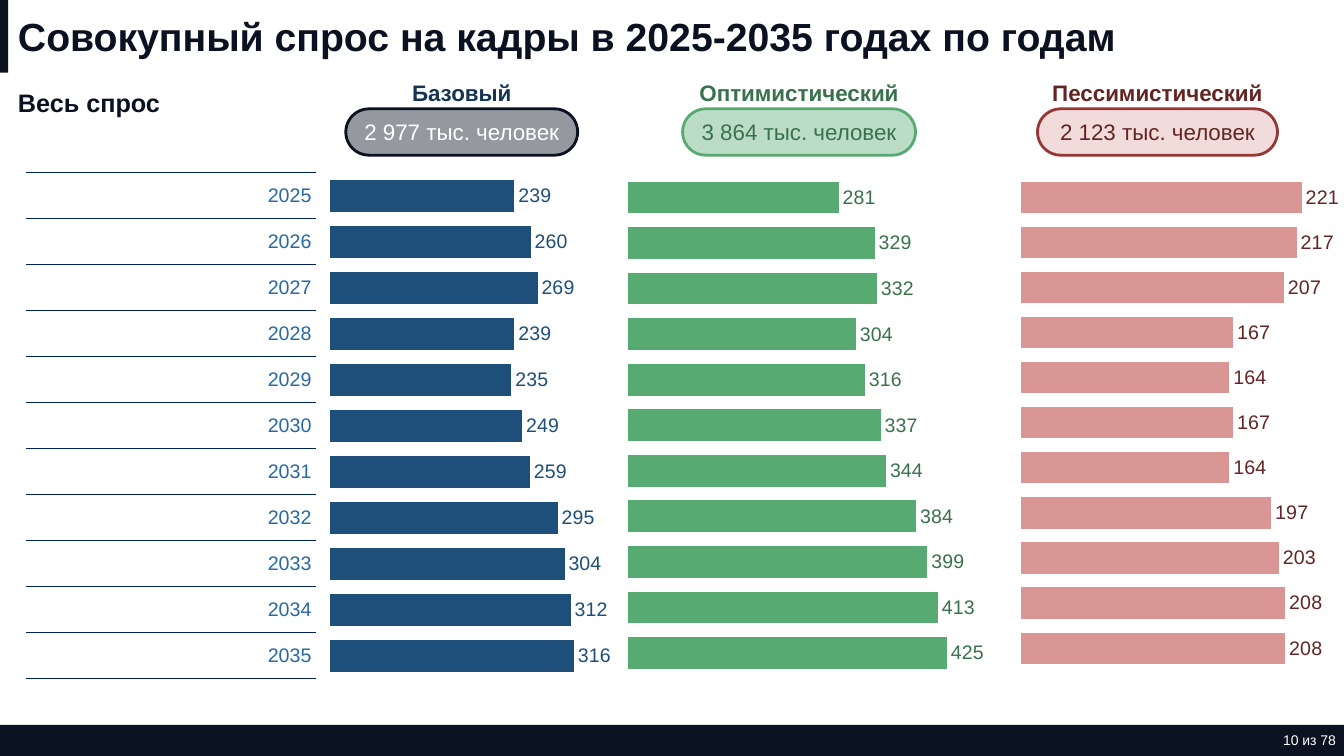
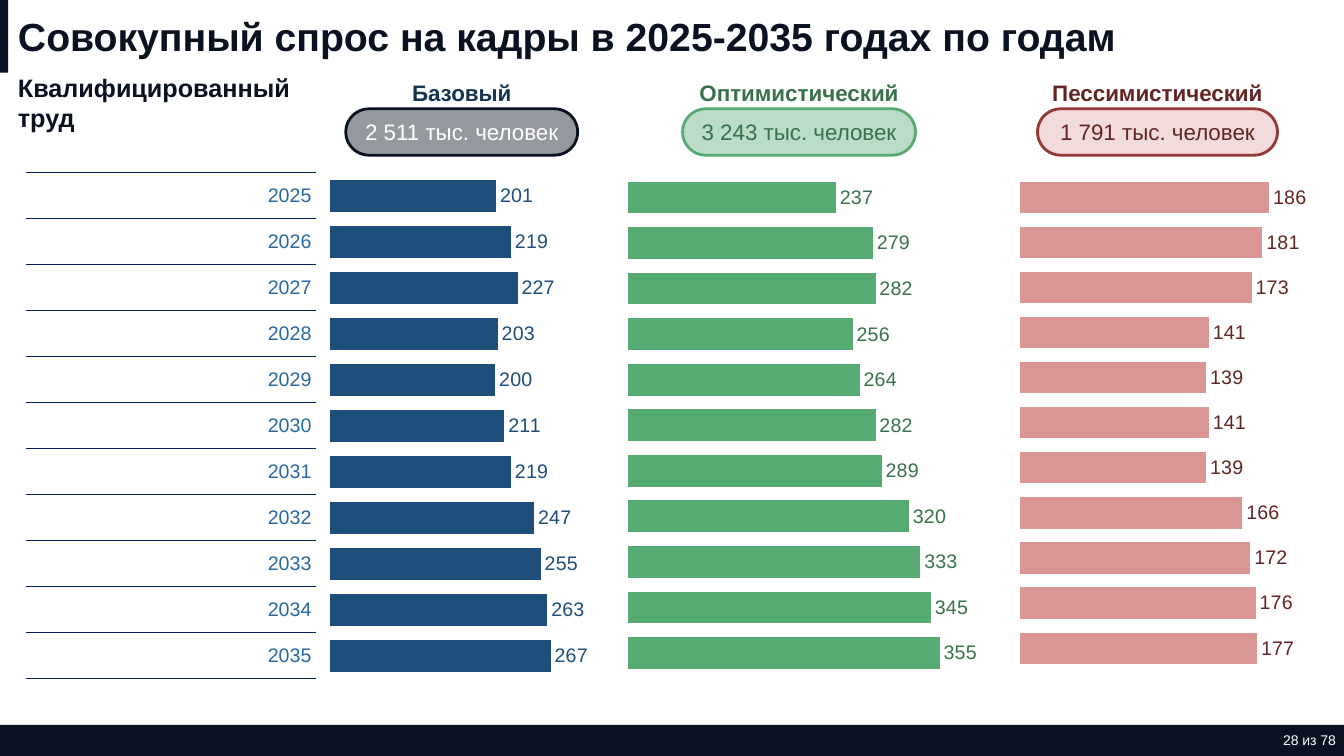
from dataclasses import dataclass

from lxml import etree
from pptx import Presentation
from pptx.chart.data import CategoryChartData
from pptx.dml.color import RGBColor
from pptx.enum.chart import XL_CHART_TYPE, XL_LABEL_POSITION
from pptx.enum.shapes import MSO_SHAPE
from pptx.enum.text import MSO_ANCHOR, PP_ALIGN
from pptx.oxml.ns import qn
from pptx.util import Inches, Pt

BAR = XL_CHART_TYPE.BAR_CLUSTERED
OUTER = XL_LABEL_POSITION.OUTSIDE_END
RECT, PILL = MSO_SHAPE.RECTANGLE, MSO_SHAPE.ROUNDED_RECTANGLE
MIDDLE = MSO_ANCHOR.MIDDLE
LEFT, CENTER, RIGHT = PP_ALIGN.LEFT, PP_ALIGN.CENTER, PP_ALIGN.RIGHT

FONT = "Arial"
WIDE, HIGH = 13.33, 7.5
TITLE = "Совокупный спрос на кадры в 2025-2035 годах по годам"
YEARS = range(2025, 2036)
COLORS = {
    "ink": "0A1121", "white": "FFFFFF", "black": "000000",
    "year": "2868A3", "rule": "002060",
    "navy": "143452", "blue": "1E4E7A",
    "forest": "39714C", "green": "56AA72", "mint": "BBDDC7",
    "wine": "632523", "red": "953735", "rose": "D99694", "blush": "F2DCDB",
}


@dataclass
class Scene:
    """Look and place of one scenario column."""
    name: str
    pill: tuple
    label: float
    chart: tuple
    top: float
    head: str
    text: str
    fill: str
    line: str
    bar: str
    value: str
    alpha: int = 100


SCENES = [
    Scene("Базовый", (3.43, 1.08, 2.3, 0.46), 2.25, (3.19, 1.54, 5.3), 0.033,
          "navy", "white", "ink", "ink", "blue", "blue", 43),
    Scene("Оптимистический", (6.77, 1.08, 2.31, 0.46), 2.25, (6.12, 1.54, 5.27), 0.037,
          "forest", "forest", "mint", "green", "green", "forest"),
    Scene("Пессимистический", (10.29, 1.08, 2.38, 0.46), 2.5, (10.03, 1.54, 5.22), 0.037,
          "wine", "wine", "blush", "red", "rose", "wine"),
]


@dataclass
class Data:
    """Total, chart width, plot share, axis end and yearly values."""
    total: str
    width: float
    share: float
    end: int
    values: list


PAGES = [
    ("Весь спрос", "10 из 78", [
        Data("2 977 тыс. человек", 2.87, 0.958, 357,
             [239, 260, 269, 239, 235, 249, 259, 295, 304, 312, 316]),
        Data("3 864 тыс. человек", 3.64, 0.958, 465,
             [281, 329, 332, 304, 316, 337, 344, 384, 399, 413, 425]),
        Data("2 123 тыс. человек", 3.29, 0.958, 250,
             [221, 217, 207, 167, 164, 167, 164, 197, 203, 208, 208]),
    ]),
    ("Квалифицированный труд", "28 из 78", [
        Data("2 511 тыс. человек", 2.87, 0.857, 300,
             [201, 219, 227, 203, 200, 211, 219, 247, 255, 263, 267]),
        Data("3 243 тыс. человек", 3.64, 0.958, 400,
             [237, 279, 282, 256, 264, 282, 289, 320, 333, 345, 355]),
        Data("1 791 тыс. человек", 2.97, 0.895, 200,
             [186, 181, 173, 141, 139, 141, 139, 166, 172, 176, 177]),
    ]),
]


def paint(name):
    """Return the named colour."""
    return RGBColor.from_string(COLORS[name])


def place(box):
    """Turn a box in inches into lengths."""
    return [Inches(side) for side in box]


def style(font, size, color, bold=False):
    """Set the face, size, colour and weight of a font."""
    font.name, font.size, font.bold = FONT, Pt(size), bold
    font.color.rgb = paint(color)


def write(frame, text, size=14, color="ink", bold=False, align=LEFT):
    """Put one formatted paragraph into a text frame."""
    frame.word_wrap = True
    para = frame.paragraphs[0]
    para.alignment = align
    run = para.add_run()
    run.text = text
    style(run.font, size, color, bold)


def label(slide, box, text, inset=0.1, **look):
    """Add a text box centred on its height."""
    frame = slide.shapes.add_textbox(*place(box)).text_frame
    frame.vertical_anchor = MIDDLE
    frame.margin_right = Inches(inset)
    write(frame, text, **look)


def block(slide, box, kind, fill, line=None, alpha=100):
    """Add a filled shape with an optional outline."""
    shape = slide.shapes.add_shape(kind, *place(box))
    shape.shadow.inherit = False
    shape.fill.solid()
    shape.fill.fore_color.rgb = paint(fill)
    if alpha < 100:
        tone = shape.element.spPr.find(qn("a:solidFill") + "/" + qn("a:srgbClr"))
        etree.SubElement(tone, qn("a:alpha"), val=str(alpha * 1000))
    if line:
        shape.line.color.rgb = paint(line)
        shape.line.width = Pt(2)
    else:
        shape.line.fill.background()
    return shape


def border(cell):
    """Rule the top and bottom of a table cell."""
    props = cell._tc.get_or_add_tcPr()
    for spot, side in enumerate(("a:lnL", "a:lnR", "a:lnT", "a:lnB")):
        line = etree.Element(qn(side), w=str(Pt(0.25)))
        if side in ("a:lnT", "a:lnB"):
            solid = etree.SubElement(line, qn("a:solidFill"))
            etree.SubElement(solid, qn("a:srgbClr"), val=COLORS["rule"])
        else:
            etree.SubElement(line, qn("a:noFill"))
        props.insert(spot, line)


def years(slide, box):
    """Add the ruled column of years."""
    table = slide.shapes.add_table(len(YEARS), 1, *place(box)).table
    table.first_row = table.horz_banding = False
    for row, year in zip(table.rows, YEARS):
        row.height = Inches(box[3] / len(YEARS))
        cell = row.cells[0]
        cell.fill.background()
        border(cell)
        cell.vertical_anchor = MIDDLE
        cell.margin_left, cell.margin_right = Inches(0.01), Inches(0.04)
        cell.margin_top = cell.margin_bottom = 0
        write(cell.text_frame, str(year), color="year", align=RIGHT)


def head(slide, box, scene, total):
    """Add a scenario name above its pill with the total."""
    left, top, width, height = box
    pill = block(slide, box, PILL, scene.fill, scene.line, scene.alpha)
    pill.adjustments[0] = 0.5
    pill.text_frame.vertical_anchor = MIDDLE
    write(pill.text_frame, total, size=16, color=scene.text, align=CENTER)
    start = left + (width - scene.label) / 2
    label(slide, (start, top - 0.39, scene.label, height), scene.name,
          size=16, color=scene.head, bold=True, align=CENTER)


def fit(chart, top, share):
    """Fix the inner plot area as shares of the chart."""
    plot = chart._chartSpace.chart.plotArea
    for old in plot.findall(qn("c:layout")):
        plot.remove(old)
    layout = etree.Element(qn("c:layout"))
    plot.insert(0, layout)
    manual = etree.SubElement(layout, qn("c:manualLayout"))
    parts = {"layoutTarget": "inner", "xMode": "edge", "yMode": "edge",
             "x": 0.029, "y": top, "w": share, "h": 0.98 - top}
    for tag, value in parts.items():
        etree.SubElement(manual, qn("c:" + tag), val=str(value))


def graph(slide, box, scene, data):
    """Add the bar chart of one scenario."""
    source = CategoryChartData(number_format="#,##0")
    source.categories = [str(n + 1) for n in range(len(YEARS))]
    source.add_series("Series 1", data.values[::-1])
    chart = slide.shapes.add_chart(BAR, *place(box), source).chart
    chart.has_legend = chart.has_title = False
    style(chart.font, 10, "black")
    for axis in (chart.category_axis, chart.value_axis):
        axis.has_major_gridlines = False
        axis.visible = False
    chart.value_axis.minimum_scale = 0
    chart.value_axis.maximum_scale = data.end
    plot = chart.plots[0]
    plot.gap_width, plot.vary_by_categories = 44, False
    series = plot.series[0]
    series.format.fill.solid()
    series.format.fill.fore_color.rgb = paint(scene.bar)
    marks = series.data_labels
    marks.show_value, marks.position = True, OUTER
    marks.number_format, marks.number_format_is_linked = "#,##0", False
    style(marks.font, 14, scene.value)
    fit(chart, scene.top, data.share)


def base(slide, page):
    """Add the title, bands and page number."""
    foot = 0.31
    block(slide, (0, HIGH - foot, WIDE, foot), RECT, "ink")
    block(slide, (0, 0, 0.08, 0.72), RECT, "ink")
    label(slide, (0.08, 0, WIDE - 0.08, 0.72), TITLE, size=28, bold=True)
    label(slide, (12.04, HIGH - foot, 1.21, foot), page, inset=0,
          size=10, color="white", align=RIGHT)


def build(deck, topic, page, columns):
    """Build one slide of yearly demand in three scenarios."""
    slide = deck.slides.add_slide(deck.slide_layouts[6])
    base(slide, page)
    years(slide, (0.26, 1.71, 2.87, 5.02))
    label(slide, (0.08, 0.77, 3.37, 0.5), topic, size=18, bold=True)
    for scene, data in zip(SCENES, columns):
        left, top, height = scene.chart
        graph(slide, (left, top, data.width, height), scene, data)
        head(slide, scene.pill, scene, data.total)


def main():
    """Build and save the deck."""
    deck = Presentation()
    deck.slide_width, deck.slide_height = Inches(WIDE), Inches(HIGH)
    for page in PAGES:
        build(deck, *page)
    deck.save("out.pptx")


if __name__ == "__main__":
    main()
